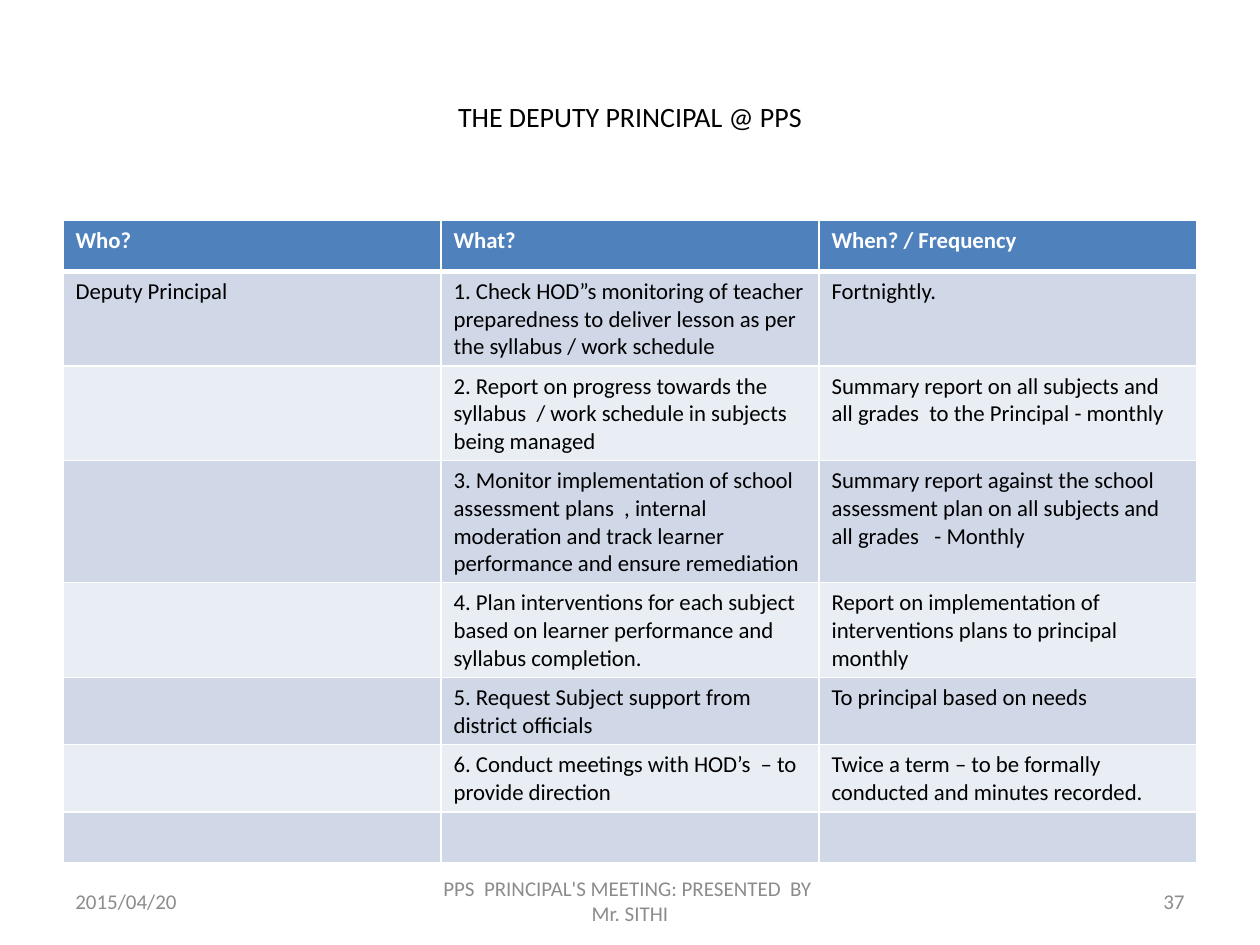
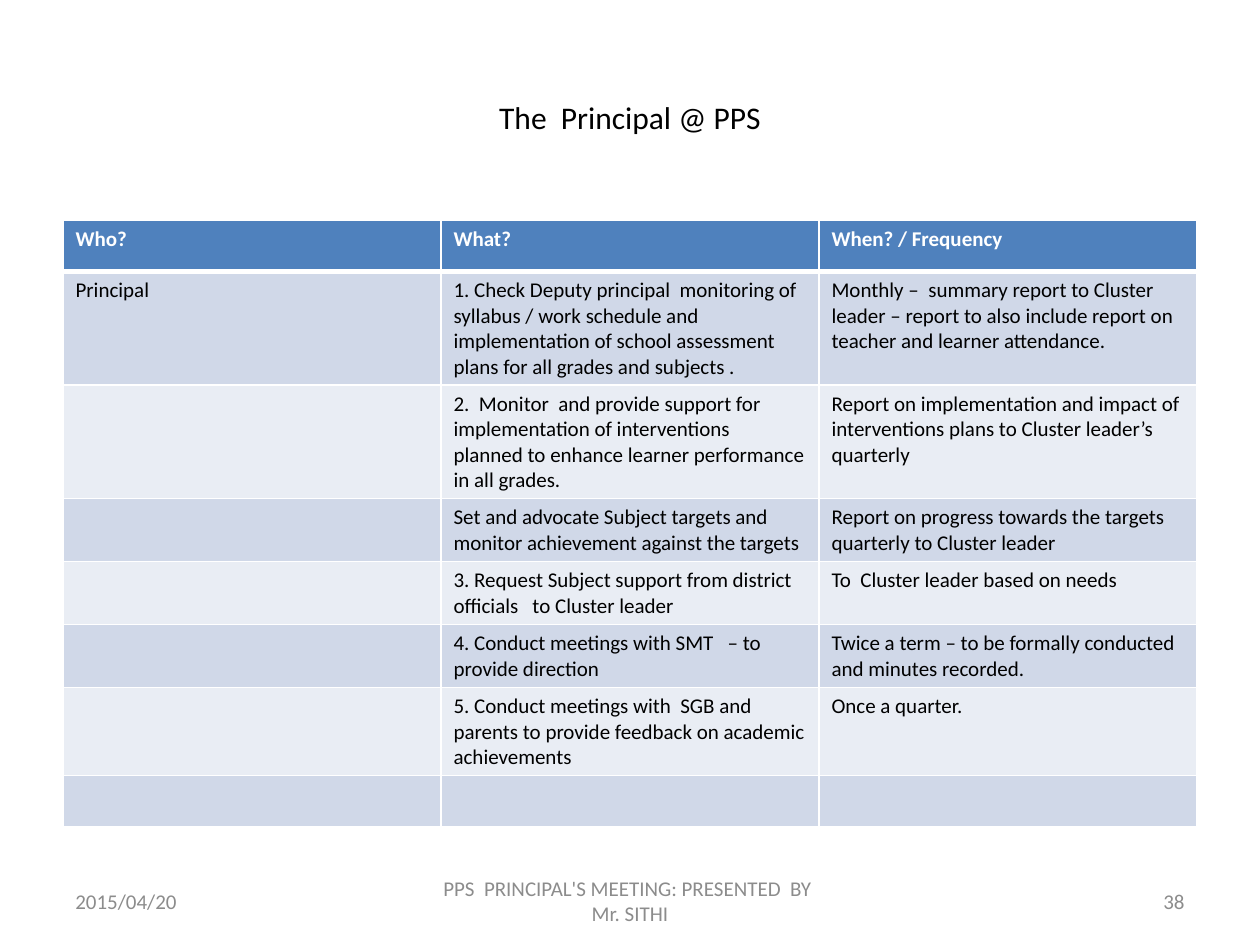
import pptx
import pptx.dml.color
import pptx.enum.text
import pptx.oxml
import pptx.oxml.ns
import pptx.util

RGBColor = pptx.dml.color.RGBColor
ALIGN = pptx.enum.text.PP_ALIGN
MIDDLE = pptx.enum.text.MSO_ANCHOR.MIDDLE

BLACK = RGBColor(0x00, 0x00, 0x00)
WHITE = RGBColor(0xFF, 0xFF, 0xFF)
GREY = RGBColor(0x8C, 0x8C, 0x8C)
HEADER_BLUE = RGBColor(0x4F, 0x81, 0xBD)
BANDS = [RGBColor(0xE9, 0xED, 0xF4), RGBColor(0xD0, 0xD8, 0xE8)]
FONT = "Calibri"

deck = pptx.Presentation()
deck.slide_width = pptx.util.Inches(10)
deck.slide_height = pptx.util.Inches(7.5)
WIDTH, HEIGHT = deck.slide_width, deck.slide_height

# Shares of the slide's width and height
MARGIN = 0.05
CONTENT = 1 - 2 * MARGIN
TITLE_TOP, TITLE_HEIGHT = 0.04, 0.167
TABLE_TOP, ROW_HEIGHT = 0.2333, 0.054
FOOTER_TOP, FOOTER_HEIGHT = 0.927, 0.053
SIDE_WIDTH, MIDDLE_WIDTH = 0.2333, 0.3167

HEADINGS = ["Who?", "What?", "When? / Frequency"]
FOOTER = "PPS  PRINCIPAL'S MEETING: PRESENTED  BY  Mr. SITHI"
DATE = "2015/04/20"

SLIDES = [
    {
        "title": "THE DEPUTY PRINCIPAL @ PPS", "title_size": 16,
        "table_size": 13, "number": 37, "who": "Deputy Principal",
        "duties": [
            ("1. Check HOD”s monitoring of teacher preparedness to deliver lesson "
             "as per the syllabus / work schedule",
             "Fortnightly."),
            ("2. Report on progress towards the syllabus  / work schedule in "
             "subjects being managed",
             "Summary report on all subjects and all grades  to the Principal "
             "- monthly"),
            ("3. Monitor implementation of school assessment plans  , internal "
             "moderation and track learner performance and ensure remediation",
             "Summary report against the school assessment plan on all subjects "
             "and all grades   - Monthly"),
            ("4. Plan interventions for each subject based on learner performance "
             "and syllabus completion.",
             "Report on implementation of interventions plans to principal monthly"),
            ("5. Request Subject support from district officials",
             "To principal based on needs"),
            ("6. Conduct meetings with HOD’s  – to provide direction",
             "Twice a term – to be formally conducted and minutes recorded."),
        ],
    },
    {
        "title": "The  Principal @ PPS", "title_size": 18,
        "table_size": 12, "number": 38, "who": "Principal",
        "duties": [
            ("1. Check Deputy principal  monitoring of  syllabus / work schedule "
             "and implementation of school assessment plans for all grades and "
             "subjects .",
             "Monthly –  summary report to Cluster leader – report to also include "
             "report on teacher and learner attendance."),
            ("2.  Monitor  and provide support for implementation of interventions  "
             "planned to enhance learner performance in all grades.",
             "Report on implementation and impact of interventions plans to "
             "Cluster leader’s quarterly"),
            ("Set and advocate Subject targets and monitor achievement against "
             "the targets",
             "Report on progress towards the targets quarterly to Cluster leader"),
            ("3. Request Subject support from district officials   to Cluster leader",
             "To  Cluster leader based on needs"),
            ("4. Conduct meetings with SMT   – to provide direction",
             "Twice a term – to be formally conducted and minutes recorded."),
            ("5. Conduct meetings with  SGB and parents to provide feedback on "
             "academic achievements",
             "Once a quarter."),
        ],
    },
]


def add_text(page, text, left, top, width, height, size, color, align):
    """Add a vertically centred text box placed by shares of the slide."""
    box = page.shapes.add_textbox(int(left * WIDTH), int(top * HEIGHT),
                                  int(width * WIDTH), int(height * HEIGHT))
    frame = box.text_frame
    frame.word_wrap = True
    frame.vertical_anchor = MIDDLE
    frame.text = text
    para = frame.paragraphs[0]
    para.alignment = align
    span = para.runs[0]
    span.font.name = FONT
    span.font.size = pptx.util.Pt(size)
    span.font.color.rgb = color


def add_borders(cell, row):
    """Draw white cell borders, with a thick rule below the header row."""
    points = {"L": 1, "R": 1, "T": 3 if row == 1 else 1, "B": 3 if row == 0 else 1}
    properties = cell._tc.get_or_add_tcPr()
    for place, (side, weight) in enumerate(points.items()):
        line = pptx.oxml.parse_xml(
            f'<a:ln{side} {pptx.oxml.ns.nsdecls("a")} w="{pptx.util.Pt(weight)}">'
            f'<a:solidFill><a:srgbClr val="{WHITE}"/></a:solidFill></a:ln{side}>')
        properties.insert(place, line)


for content in SLIDES:
    page = deck.slides.add_slide(deck.slide_layouts[6])
    add_text(page, content["title"], MARGIN, TITLE_TOP, CONTENT, TITLE_HEIGHT,
             content["title_size"], BLACK, ALIGN.CENTER)

    rows = [HEADINGS] + [["", what, when] for what, when in content["duties"]]
    rows.append([""] * len(HEADINGS))
    rows[1][0] = content["who"]
    row_height = int(ROW_HEIGHT * HEIGHT)
    table = page.shapes.add_table(
        len(rows), len(HEADINGS), int(MARGIN * WIDTH), int(TABLE_TOP * HEIGHT),
        int(CONTENT * WIDTH), row_height * len(rows)).table

    for row, texts in enumerate(rows):
        for column, text in enumerate(texts):
            cell = table.cell(row, column)
            cell.fill.solid()
            cell.fill.fore_color.rgb = BANDS[row % 2] if row else HEADER_BLUE
            add_borders(cell, row)
            if text:
                cell.text_frame.text = text
                font = cell.text_frame.paragraphs[0].runs[0].font
                font.name = FONT
                font.size = pptx.util.Pt(content["table_size"])
                font.bold = row == 0
                font.color.rgb = BLACK if row else WHITE

    footers = [
        (str(content["number"]), 1 - MARGIN - SIDE_WIDTH, SIDE_WIDTH, ALIGN.RIGHT),
        (FOOTER, (1 - MIDDLE_WIDTH) / 2, MIDDLE_WIDTH, ALIGN.CENTER),
        (DATE, MARGIN, SIDE_WIDTH, ALIGN.LEFT),
    ]
    for text, left, width, align in footers:
        add_text(page, text, left, FOOTER_TOP, width, FOOTER_HEIGHT, 12, GREY, align)

deck.save("out.pptx")
